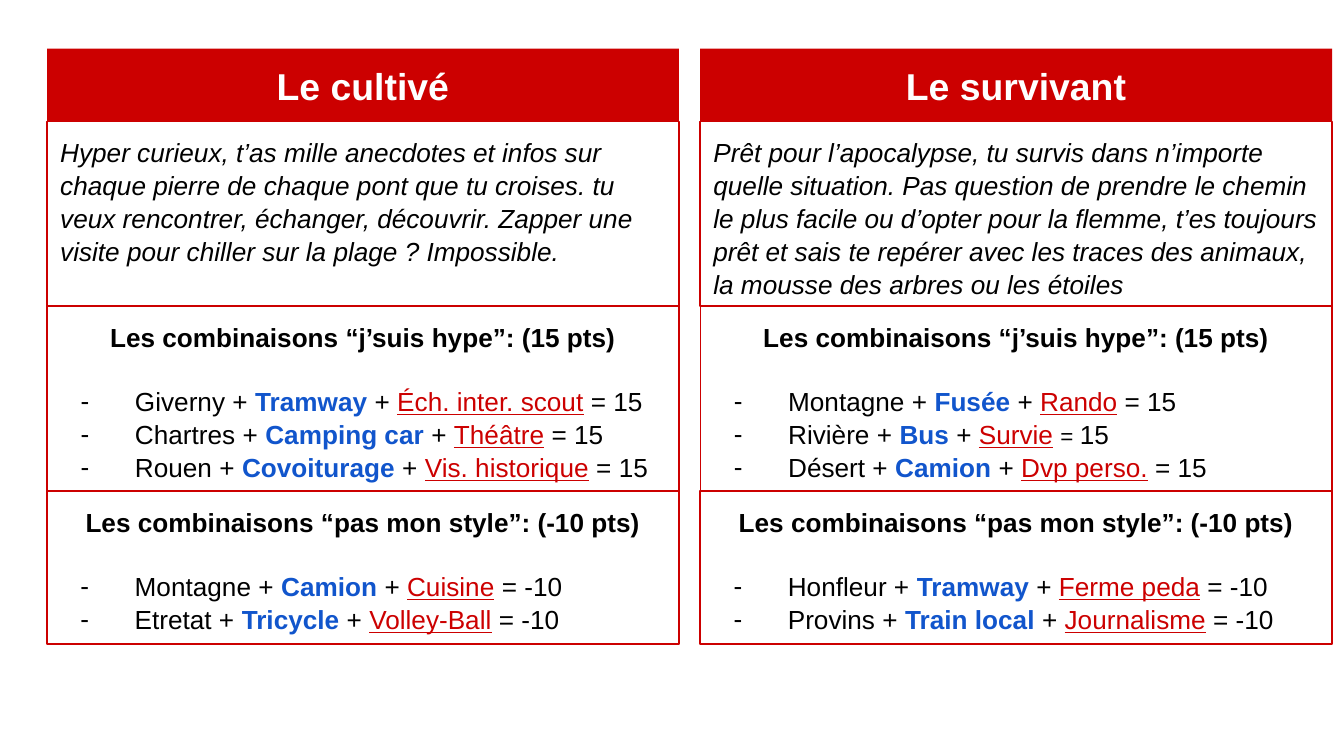
from lxml import etree
from pptx import Presentation
from pptx.dml.color import RGBColor
from pptx.enum import shapes, text
from pptx.oxml import ns
from pptx.util import Pt

HUES = {"red": "CC0000", "blue": "1155CC", "white": "FFFFFF", "black": "000000"}
WIDE = 338.5
LEFTS = (25.2, 375.1)
ROWS = ((26, 39), (65, 99), (164, 99), (263, 82))  # top, height
HYPE = "Les combinaisons “j’suis hype”: (15 pts)"
MEH = "Les combinaisons “pas mon style”: (-10 pts)"

# Each trip: place, transport, activity and, if smaller, the size of its "="
CARDS = [
    {
        "name": "Le cultivé",
        "about": "Hyper curieux, t’as mille anecdotes et infos sur chaque pierre "
                 "de chaque pont que tu croises. tu veux rencontrer, échanger, "
                 "découvrir. Zapper une visite pour chiller sur la plage ? "
                 "Impossible.",
        "hype": [("Giverny", "Tramway", "Éch. inter. scout"),
                 ("Chartres", "Camping car", "Théâtre"),
                 ("Rouen", "Covoiturage", "Vis. historique")],
        "meh": [("Montagne", "Camion", "Cuisine"),
                ("Etretat", "Tricycle", "Volley-Ball")],
    },
    {
        "name": "Le survivant",
        "about": "Prêt pour l’apocalypse, tu survis dans n’importe quelle "
                 "situation. Pas question de prendre le chemin le plus facile ou "
                 "d’opter pour la flemme, t’es toujours prêt et sais te repérer "
                 "avec les traces des animaux, la mousse des arbres ou les étoiles",
        "hype": [("Montagne", "Fusée", "Rando"),
                 ("Rivière", "Bus", "Survie", 12),
                 ("Désert", "Camion", "Dvp perso.")],
        "meh": [("Honfleur", "Tramway", "Ferme peda"),
                ("Provins", "Train local", "Journalisme")],
    },
]


def hue(name):
    return RGBColor.from_string(HUES[name])


class Deck:
    font, size, inset, lead = "Arial", 14, 7.2, 1.05

    def __init__(self, wide, high):
        self.prs = Presentation()
        self.prs.slide_width, self.prs.slide_height = Pt(wide), Pt(high)
        self.slide = self.prs.slides.add_slide(self.prs.slide_layouts[4])
        title = self.slide.shapes.title._element
        title.getparent().remove(title)

    def box(self, left, row, fill="white", line="red", slot=None):
        """Place a filled box, in the placeholder numbered slot if given."""
        top, high = ROWS[row]
        area = [Pt(n) for n in (left, top, WIDE, high)]
        if slot is None:
            box = self.slide.shapes.add_shape(shapes.MSO_SHAPE.RECTANGLE, *area)
        else:
            box = self.slide.placeholders[slot]
            box.left, box.top, box.width, box.height = area
        box.shadow.inherit = False
        box.fill.solid()
        box.fill.fore_color.rgb = hue(fill)
        if line:
            box.line.color.rgb = hue(line)
            box.line.width = Pt(0.75)
        else:
            box.line.fill.background()
        frame = box.text_frame
        frame.word_wrap = True
        frame.auto_size = text.MSO_AUTO_SIZE.NONE
        frame.vertical_anchor = text.MSO_ANCHOR.TOP
        frame.margin_left = frame.margin_right = Pt(self.inset)
        frame.margin_top = frame.margin_bottom = Pt(self.inset)
        return frame

    def para(self, frame, first=False, align="LEFT", gap=0, dash=False):
        para = frame.paragraphs[0] if first else frame.add_paragraph()
        para.alignment = getattr(text.PP_ALIGN, align)
        para.line_spacing = self.lead
        para.space_before, para.space_after = Pt(gap), Pt(0)
        props = para._p.get_or_add_pPr()
        props.set("marL", str(Pt(36 if dash else 0)))
        props.set("indent", str(Pt(-25.2 if dash else 0)))
        if dash:
            tint = etree.SubElement(props, ns.qn("a:buClr"))
            etree.SubElement(tint, ns.qn("a:srgbClr"), val=HUES["black"])
            etree.SubElement(props, ns.qn("a:buFont"), typeface=self.font)
            etree.SubElement(props, ns.qn("a:buChar"), char="-")
        else:
            etree.SubElement(props, ns.qn("a:buNone"))
        return para

    def run(self, para, words, tint="black", size=None, bold=False,
            slant=False, under=False):
        run = para.add_run()
        run.text = words
        font = run.font
        font.name, font.size = self.font, Pt(size or self.size)
        font.bold, font.italic, font.underline = bold, slant, under
        font.color.rgb = hue(tint)

    def head(self, left, words, slot):
        frame = self.box(left, 0, fill="red", line=None, slot=slot)
        frame.vertical_anchor = text.MSO_ANCHOR.MIDDLE
        para = self.para(frame, first=True, align="CENTER")
        self.run(para, words, "white", 20, bold=True)

    def note(self, left, words):
        para = self.para(self.box(left, 1), first=True)
        self.run(para, words, slant=True)

    def trips(self, left, row, label, score, items, slot=None):
        frame = self.box(left, row, slot=slot)
        para = self.para(frame, first=True, align="CENTER")
        self.run(para, label, bold=True)
        for rank, (place, ride, act, *small) in enumerate(items):
            para = self.para(frame, gap=0 if rank else 16.9, dash=True)
            self.run(para, f" {place} + ")
            self.run(para, f"{ride} ", "blue", bold=True)
            self.run(para, "+ ")
            self.run(para, act, "red", under=True)
            self.run(para, " ")
            self.run(para, "= ", size=small[0] if small else None)
            self.run(para, score)

    def card(self, left, data, slot):
        self.head(left, data["name"], slot)
        self.note(left, data["about"])
        self.trips(left, 2, HYPE, "15", data["hype"], slot + 1)
        self.trips(left, 3, MEH, "-10", data["meh"])


def main():
    deck = Deck(720, 405)
    for left, data, slot in zip(LEFTS, CARDS, (1, 3)):
        deck.card(left, data, slot)
    deck.prs.save("out.pptx")


if __name__ == "__main__":
    main()
